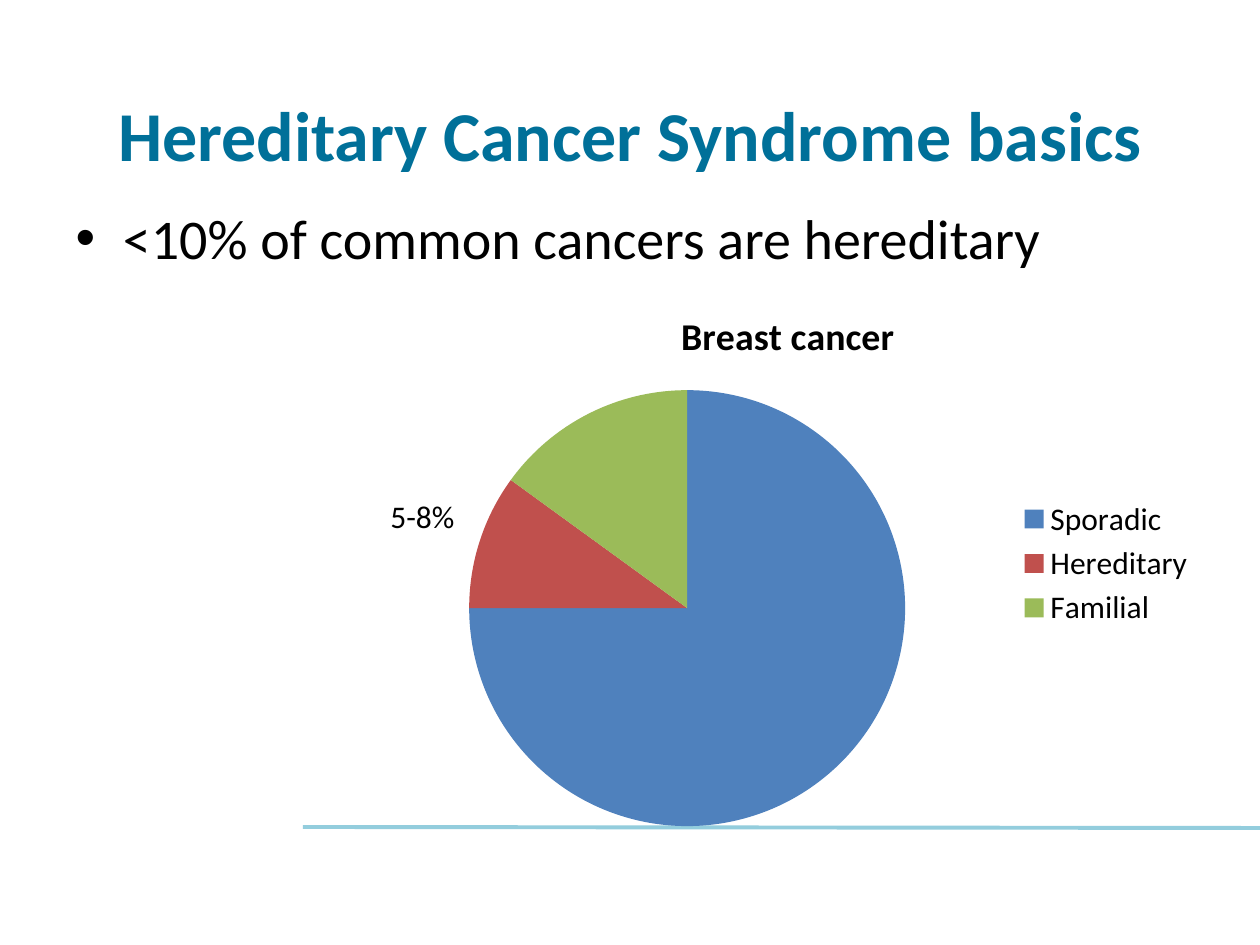
from dataclasses import dataclass

from lxml import etree
from pptx import Presentation
from pptx.chart.data import CategoryChartData
from pptx.dml.color import RGBColor
from pptx.enum import chart as charts, shapes, text
from pptx.oxml import parse_xml
from pptx.oxml.ns import nsdecls, qn
from pptx.util import Emu, Pt


@dataclass(frozen=True)
class Theme:
    font: str = "Calibri"
    title: str = "007099"
    ink: str = "000000"
    rule: str = "93CDDD"
    slices: tuple = ("4F81BD", "C0504D", "9BBB59")
    title_size: float = 40
    body_size: float = 32
    chart_title_size: float = 21.6
    label_size: float = 18


theme = Theme()


def px(*lengths):
    return [Emu(round(length * 914400 / 126)) for length in lengths]


def style(font, size, color, bold=False):
    font.name = theme.font
    font.size = Pt(size)
    font.bold = bold
    font.color.rgb = RGBColor.from_string(color)


presentation = Presentation()
presentation.slide_width, presentation.slide_height = px(1260, 945)
slide = presentation.slides.add_slide(presentation.slide_layouts[1])

rule = slide.shapes.add_connector(
    shapes.MSO_CONNECTOR.STRAIGHT, *px(1260, 828, 303, 827))
rule.line.color.rgb = RGBColor.from_string(theme.rule)
rule.line.width = Pt(2.25)
etree.SubElement(rule._element.spPr, qn("a:effectLst"))
slide.shapes._spTree.insert(2, rule._element)

title = slide.shapes.title
title.left, title.top, title.width, title.height = px(63, 77, 1134, 113)
title.text_frame.text = "Hereditary Cancer Syndrome basics"
title.text_frame.vertical_anchor = text.MSO_ANCHOR.MIDDLE
paragraph = title.text_frame.paragraphs[0]
paragraph.alignment = text.PP_ALIGN.CENTER
style(paragraph.font, theme.title_size, theme.title, bold=True)

body = slide.placeholders[1]
body.left, body.top, body.width, body.height = px(63, 197, 1134, 563)
body.text_frame.text = "<10% of common cancers are hereditary"
style(body.text_frame.paragraphs[0].font, theme.body_size, theme.ink)

data = CategoryChartData()
data.categories = ["Sporadic", "Hereditary", "Familial"]
data.add_series("Breast cancer", (75, 10, 15))
chart = slide.shapes.add_chart(
    charts.XL_CHART_TYPE.PIE, *px(368, 284, 840, 559), data).chart
style(chart.font, theme.label_size, theme.ink)
chart.has_title = True
chart.chart_title.text_frame.text = "Breast cancer"
style(chart.chart_title.text_frame.paragraphs[0].font,
      theme.chart_title_size, theme.ink, bold=True)
chart.has_legend = True
chart.legend.position = charts.XL_LEGEND_POSITION.RIGHT
chart.legend.include_in_layout = False
style(chart.legend.font, theme.label_size, theme.ink)

pie = chart.plots[0]
pie.vary_by_categories = True
for index, color in enumerate(theme.slices):
    fill = pie.series[0].points[index].format.fill
    fill.solid()
    fill.fore_color.rgb = RGBColor.from_string(color)

plot_area = chart._chartSpace.chart.plotArea
for layout in plot_area.findall(qn("c:layout")):
    plot_area.remove(layout)
plot_area.insert(0, parse_xml(
    f'<c:layout {nsdecls("c")}><c:manualLayout><c:layoutTarget val="inner"/>'
    '<c:xMode val="edge"/><c:yMode val="edge"/><c:x val="0.12"/>'
    '<c:y val="0.19"/><c:w val="0.52"/><c:h val="0.78"/>'
    '</c:manualLayout></c:layout>'))

share = slide.shapes.add_textbox(*px(378, 491, 105, 50))
share.text_frame.word_wrap = True
share.text_frame.auto_size = text.MSO_AUTO_SIZE.SHAPE_TO_FIT_TEXT
share.text_frame.text = "5-8%"
style(share.text_frame.paragraphs[0].font, theme.label_size, theme.ink)

presentation.save("out.pptx")
